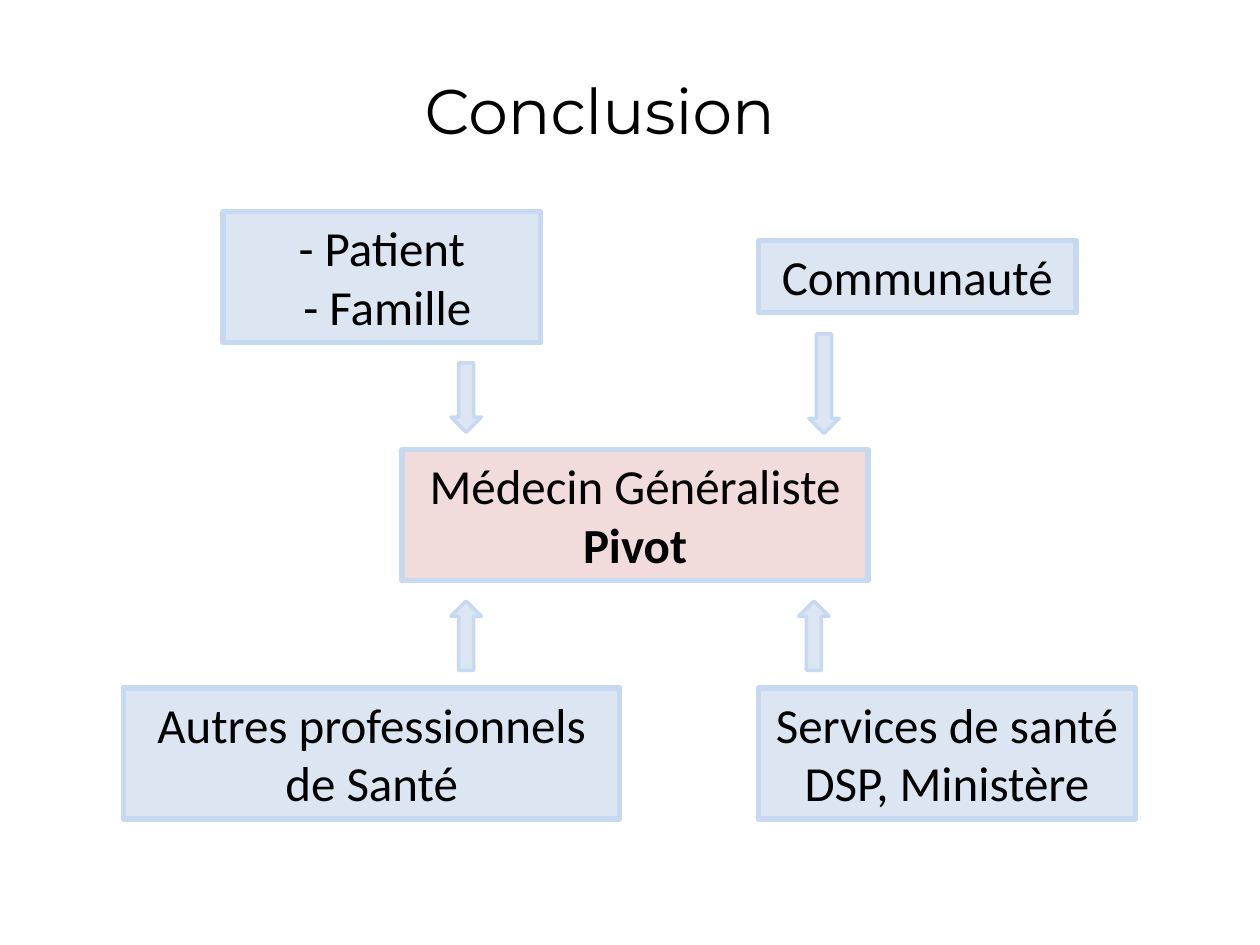
from typing import NamedTuple

from pptx import Presentation
from pptx.dml.color import RGBColor
from pptx.enum.shapes import MSO_SHAPE
from pptx.enum.text import MSO_ANCHOR, PP_ALIGN
from pptx.util import Inches, Pt

RECT = MSO_SHAPE.RECTANGLE
DOWN = MSO_SHAPE.DOWN_ARROW
UP = MSO_SHAPE.UP_ARROW
TOP = MSO_ANCHOR.TOP
LEFT = PP_ALIGN.LEFT
CENTER = PP_ALIGN.CENTER

BLACK = RGBColor(0x00, 0x00, 0x00)
PALE_BLUE = RGBColor(0xDC, 0xE6, 0xF2)
PALE_RED = RGBColor(0xF2, 0xDC, 0xDB)
BORDER = RGBColor(0xC6, 0xD9, 0xF1)

CELL = Inches(0.1)
ARROW_COLS = 2.4
TWO_LINES = 10.4


class Span(NamedTuple):
    text: str
    bold: bool = False


class Box(NamedTuple):
    col: float
    row: float
    cols: float
    rows: float
    paragraphs: list[list[Span]]
    fill: RGBColor = PALE_BLUE


class Arrow(NamedTuple):
    kind: MSO_SHAPE
    col: float
    row: float
    rows: float


BOXES = [
    Box(60.2, 19.1, 25.2, 5.7, [[Span("Communauté")]]),
    Box(17.7, 16.8, 25.2, TWO_LINES, [[Span("- Patient")], [Span(" - Famille")]]),
    Box(31.9, 35.7, 37, TWO_LINES,
        [[Span("Médecin Généraliste "), Span("Pivot", True)]], PALE_RED),
    Box(9.8, 54.6, 39.4, TWO_LINES, [[Span("Autres professionnels de Santé")]]),
    Box(60.2, 54.6, 29.9, TWO_LINES, [[Span("Services de santé DSP, Ministère")]]),
]

ARROWS = [
    Arrow(DOWN, 35.8, 28.8, 5.5),
    Arrow(DOWN, 64.2, 26.5, 7.9),
    Arrow(UP, 35.8, 47.7, 5.5),
    Arrow(UP, 63.4, 47.7, 5.5),
]


def grid(*counts: float) -> list[int]:
    return [round(n * CELL) for n in counts]


def add_run(p, span: Span, font: str, size: int) -> None:
    r = p.add_run()
    r.text = span.text
    r.font.name = font
    r.font.size = Pt(size)
    r.font.bold = span.bold
    r.font.color.rgb = BLACK


def add_filled(s, kind: MSO_SHAPE, place: list[int], fill: RGBColor, width: int):
    sp = s.shapes.add_shape(kind, *place)
    sp.shadow.inherit = False
    sp.fill.solid()
    sp.fill.fore_color.rgb = fill
    sp.line.color.rgb = BORDER
    sp.line.width = Pt(width)
    return sp


def add_box(s, box: Box) -> None:
    place = grid(box.col, box.row, box.cols, box.rows)
    tf = add_filled(s, RECT, place, box.fill, 3).text_frame
    tf.word_wrap = True
    tf.vertical_anchor = TOP
    for i, spans in enumerate(box.paragraphs):
        p = tf.add_paragraph() if i else tf.paragraphs[0]
        p.alignment = CENTER
        for span in spans:
            add_run(p, span, "Calibri", 28)


def add_arrow(s, arrow: Arrow) -> None:
    place = grid(arrow.col, arrow.row, ARROW_COLS, arrow.rows)
    add_filled(s, arrow.kind, place, PALE_BLUE, 2)


def set_title(s, text: str) -> None:
    sp = s.shapes.title
    sp.left, sp.top, sp.width, sp.height = grid(32.7, 5.2, 44.1, 7.1)
    tf = sp.text_frame
    tf.word_wrap = True
    tf.vertical_anchor = TOP
    p = tf.paragraphs[0]
    p.alignment = LEFT
    add_run(p, Span(text), "Montserrat", 36)


def main() -> None:
    prs = Presentation()
    prs.slide_width, prs.slide_height = grid(100, 75)
    s = prs.slides.add_slide(prs.slide_layouts[5])
    set_title(s, "Conclusion")
    for box in BOXES:
        add_box(s, box)
    for arrow in ARROWS:
        add_arrow(s, arrow)
    prs.save("out.pptx")


if __name__ == "__main__":
    main()
